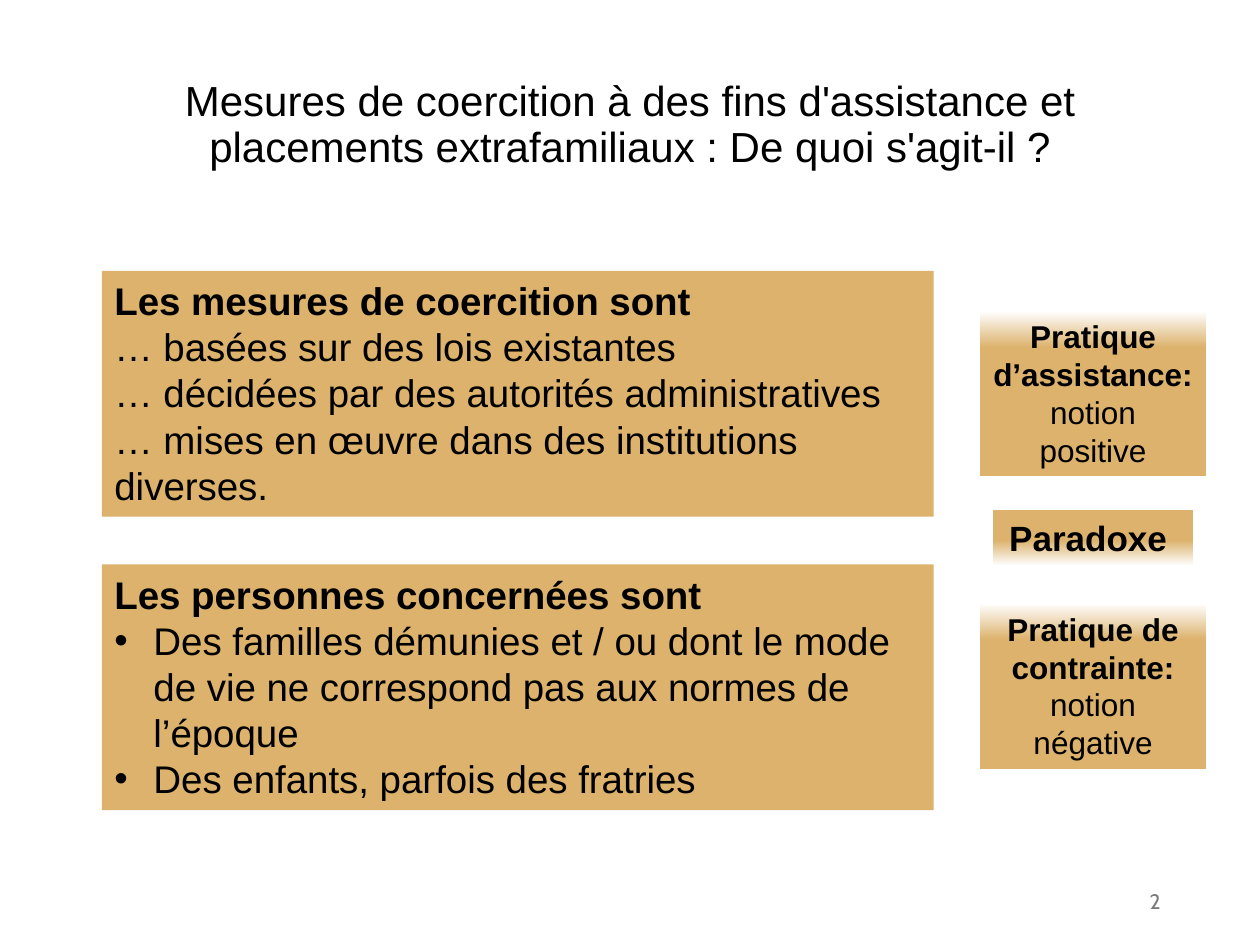
from dataclasses import dataclass

from lxml.etree import SubElement
from pptx import Presentation
from pptx.dml.color import RGBColor
from pptx.enum.shapes import MSO_SHAPE as Shape
from pptx.enum.text import MSO_ANCHOR as Anchor, MSO_AUTO_SIZE as AutoSize, PP_ALIGN as Align
from pptx.oxml.ns import qn
from pptx.util import Inches, Pt


@dataclass(frozen=True)
class Theme:
    font: str = "Arial"
    number_font: str = "Cabin"
    ink: str = "000000"
    muted: str = "797979"
    sand: str = "DCB26C"
    white: str = "FFFFFF"
    title: int = 24
    body: int = 22
    keyword: int = 20
    side: int = 18
    number: int = 12


class SlideBuilder:
    """Places elements on a grid of 100 columns by 75 rows."""

    def __init__(self, deck, theme):
        self.theme = theme
        self.slide = deck.slides.add_slide(deck.slide_layouts[6])
        self.column = deck.slide_width / 100
        self.row = deck.slide_height / 75

    def place(self, left, top, width, height):
        return (round(left * self.column), round(top * self.row),
                round(width * self.column), round(height * self.row))

    def style(self, span, size, bold=False, color=None, font=None):
        span.font.size = Pt(size)
        span.font.bold = bold
        span.font.name = font or self.theme.font
        span.font.color.rgb = RGBColor.from_string(color or self.theme.ink)

    def label(self, area, text, size, align, **style):
        frame = self.slide.shapes.add_textbox(*self.place(*area)).text_frame
        frame.word_wrap = True
        frame.vertical_anchor = Anchor.MIDDLE
        frame.text = text
        para = frame.paragraphs[0]
        para.alignment = align
        self.style(para.runs[0], size, **style)
        return para

    def box(self, area):
        box = self.slide.shapes.add_shape(Shape.RECTANGLE, *self.place(*area))
        box.shadow.inherit = False
        box.line.fill.background()
        box.fill.solid()
        box.fill.fore_color.rgb = RGBColor.from_string(self.theme.sand)
        frame = box.text_frame
        frame.word_wrap = True
        frame.auto_size = AutoSize.SHAPE_TO_FIT_TEXT
        frame.vertical_anchor = Anchor.TOP
        return box

    def panel(self, area, heading, lines, bulleted=False):
        frame = self.box(area).text_frame
        frame.text = "\n".join([heading, *lines])
        for index, para in enumerate(frame.paragraphs):
            para.alignment = Align.LEFT
            self.style(para.runs[0], self.theme.body, bold=index == 0)
            if bulleted and index:
                self.bullet(para)

    def bullet(self, para):
        props = para._p.get_or_add_pPr()
        indent = Inches(0.31)
        props.set("marL", str(indent))
        props.set("indent", str(-indent))
        SubElement(props, qn("a:buFont"), typeface=self.theme.font)
        SubElement(props, qn("a:buChar"), char="•")

    def fade_box(self, area, stops, size, bold_text, plain_text=""):
        box = self.box(area)
        self.gradient(box, stops)
        para = box.text_frame.paragraphs[0]
        para.alignment = Align.CENTER
        for text, bold in ((bold_text, True), (plain_text, False)):
            if text:
                span = para.add_run()
                span.text = text
                self.style(span, size, bold=bold)

    def gradient(self, box, stops):
        box.fill.gradient()
        grad = box._element.spPr.find(qn("a:gradFill"))
        for child in list(grad):
            grad.remove(child)
        stop_list = SubElement(grad, qn("a:gsLst"))
        for percent, color in stops:
            stop = SubElement(stop_list, qn("a:gs"), pos=str(percent * 1000))
            SubElement(stop, qn("a:srgbClr"), val=color)
        SubElement(grad, qn("a:lin"), ang="5400000", scaled="0")


def main():
    deck = Presentation()
    deck.slide_width, deck.slide_height = Inches(10), Inches(7.5)
    theme = Theme()
    page = SlideBuilder(deck, theme)

    # Title
    title = page.label(
        (6.9, 4, 86.2, 12),
        "Mesures de coercition à des fins d'assistance et placements "
        "extrafamiliaux : De quoi s'agit-il ?", theme.title, Align.CENTER)
    title.line_spacing = 0.9

    # Main panels
    page.panel((8.1, 21.5, 66, 19.5), "Les mesures de coercition sont", [
        "… basées sur des lois existantes",
        "… décidées par des autorités administratives",
        "… mises en œuvre dans des institutions diverses."])
    page.panel((8.1, 44.8, 66, 19.5), "Les personnes concernées sont", [
        "Des familles démunies et / ou dont le mode de vie ne correspond "
        "pas aux normes de l’époque",
        "Des enfants, parfois des fratries"], bulleted=True)

    # Paradox between the two practices
    fade_out = [(1, theme.sand), (54, theme.sand), (100, theme.white)]
    fade_in = [(0, theme.white), (22, theme.sand), (100, theme.sand)]
    page.fade_box((78.8, 40.5, 15.9, 4.4), fade_out, theme.keyword, "Paradoxe ")
    for top, practice, notion in (
            (24.7, "Pratique d’assistance: ", "notion positive"),
            (47.9, "Pratique de contrainte: ", "notion négative")):
        page.fade_box((77.8, top, 17.9, 13.1), fade_in, theme.side, practice, notion)

    # Slide number
    page.label((70.6, 69.5, 22.5, 4), "2", theme.number, Align.RIGHT,
               color=theme.muted, font=theme.number_font)

    deck.save("out.pptx")


if __name__ == "__main__":
    main()
